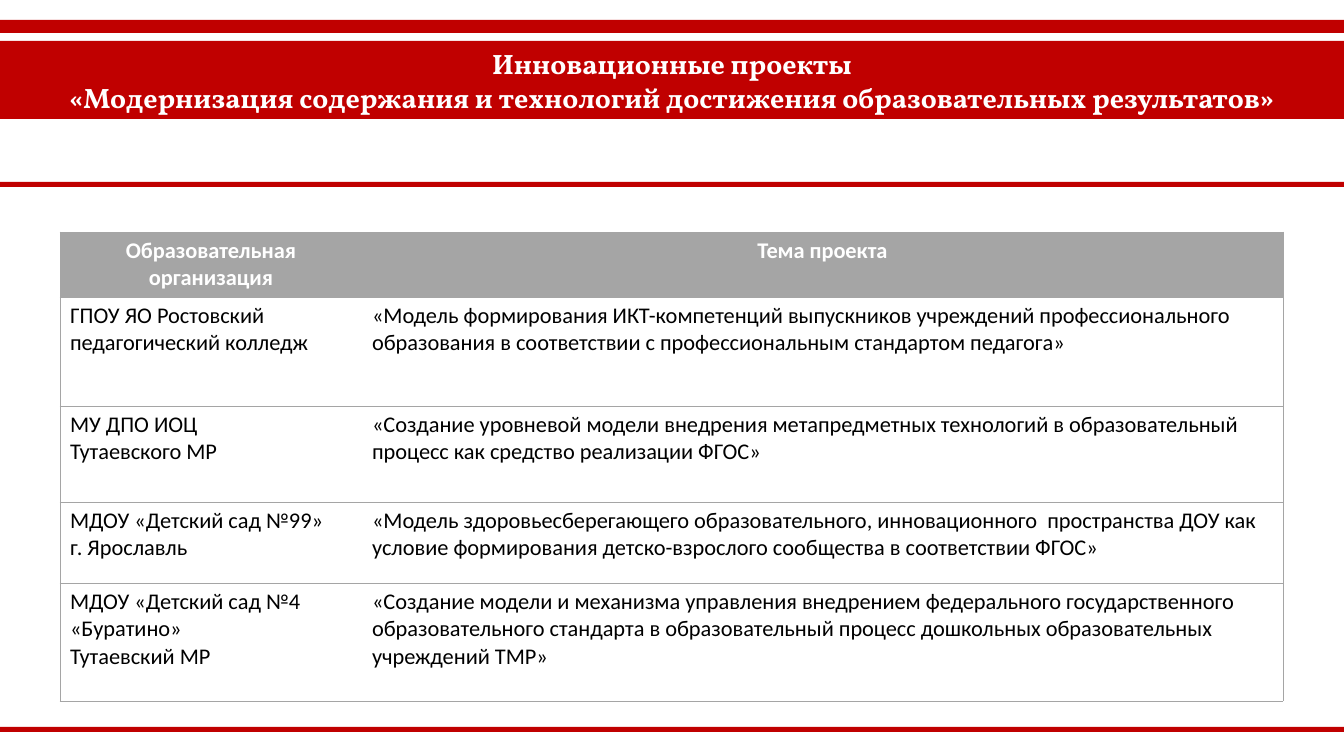
"""Builds a slide listing innovation projects of educational organisations."""
from lxml import etree
from pptx import Presentation
from pptx.dml.color import RGBColor
from pptx.enum.shapes import MSO_SHAPE
from pptx.enum.text import MSO_ANCHOR, PP_ALIGN
from pptx.oxml.ns import qn
from pptx.util import Emu, Pt

RECTANGLE = MSO_SHAPE.RECTANGLE
MIDDLE = MSO_ANCHOR.MIDDLE
CENTER, LEFT = PP_ALIGN.CENTER, PP_ALIGN.LEFT

RED = RGBColor(0xC0, 0x00, 0x00)
GRAY = RGBColor(0xA5, 0xA5, 0xA5)
WHITE = RGBColor(0xFF, 0xFF, 0xFF)
BLACK = RGBColor(0x00, 0x00, 0x00)

TITLE = [
    "Инновационные проекты",
    "«Модернизация содержания и технологий достижения образовательных результатов»",
]
PROJECTS = [
    ("Образовательная организация", "Тема проекта"),
    ("ГПОУ ЯО Ростовский педагогический колледж",
     "«Модель формирования ИКТ-компетенций выпускников учреждений профессионального "
     "образования в соответствии с профессиональным стандартом педагога»"),
    ("МУ ДПО ИОЦ \vТутаевcкого МР",
     "«Создание уровневой модели внедрения метапредметных технологий в образовательный "
     "процесс как средство реализации ФГОС»"),
    ("МДОУ «Детский сад №99»\nг. Ярославль",
     "«Модель здоровьесберегающего образовательного, инновационного  пространства ДОУ как "
     "условие формирования детско-взрослого сообщества в соответствии ФГОС»"),
    ("МДОУ «Детский сад №4 «Буратино»\nТутаевский МР",
     "«Создание модели и механизма управления внедрением федерального государственного "
     "образовательного стандарта в образовательный процесс дошкольных образовательных "
     "учреждений ТМР»"),
]

SLIDE_WIDTH, SLIDE_HEIGHT = 1344, 756
TITLE_BAND = (41, 78)
STRIPES = [(20, 13), (182, 5), (727, 5)]
TABLE_LEFT, TABLE_TOP = 60, 232
COLUMN_WIDTHS = [302, 921]
ROW_HEIGHTS = [63, 109, 96, 81, 118]

TITLE_FONT = {"name": "Vollkorn", "size": Pt(20), "bold": True}
HEADER_FONT = {"name": "Calibri", "size": Pt(16), "bold": True}
BODY_FONT = {"name": "Calibri", "size": Pt(16), "bold": False}


def px(length):
    return Emu(round(length * 914400 / 100.8))


def write(frame, text, font, color, alignment):
    frame.text = text
    for paragraph in frame.paragraphs:
        paragraph.alignment = alignment
        for run in paragraph.runs:
            for key, value in font.items():
                setattr(run.font, key, value)
            run.font.color.rgb = color


def add_band(slide, top, height):
    band = slide.shapes.add_shape(RECTANGLE, 0, px(top), px(SLIDE_WIDTH), px(height))
    band.shadow.inherit = False
    band.fill.solid()
    band.fill.fore_color.rgb = RED
    band.line.fill.background()
    return band


def set_borders(cell, visible):
    properties = cell._tc.get_or_add_tcPr()
    for side in "LRTB":
        border = etree.SubElement(properties, qn(f"a:ln{side}"), w=str(Pt(0.5)))
        if side in visible:
            fill = etree.SubElement(border, qn("a:solidFill"))
            etree.SubElement(fill, qn("a:srgbClr"), val=str(GRAY))
        else:
            etree.SubElement(border, qn("a:noFill"))


def add_projects(slide):
    table = slide.shapes.add_table(
        len(PROJECTS), len(COLUMN_WIDTHS), px(TABLE_LEFT), px(TABLE_TOP),
        px(sum(COLUMN_WIDTHS)), px(sum(ROW_HEIGHTS))).table
    table.horz_banding = False
    for column, width in zip(table.columns, COLUMN_WIDTHS):
        column.width = px(width)
    for row, height in zip(table.rows, ROW_HEIGHTS):
        row.height = px(height)
    for row_index, project in enumerate(PROJECTS):
        is_header = row_index == 0
        for column_index, text in enumerate(project):
            cell = table.cell(row_index, column_index)
            set_borders(cell, "TB" + "LR"[column_index])
            if is_header:
                cell.fill.solid()
                cell.fill.fore_color.rgb = GRAY
                write(cell.text_frame, text, HEADER_FONT, WHITE, CENTER)
            else:
                cell.fill.background()
                write(cell.text_frame, text, BODY_FONT, BLACK, LEFT)


def main():
    deck = Presentation()
    deck.slide_width, deck.slide_height = px(SLIDE_WIDTH), px(SLIDE_HEIGHT)
    slide = deck.slides.add_slide(deck.slide_layouts[6])
    title_frame = add_band(slide, *TITLE_BAND).text_frame
    title_frame.word_wrap = True
    title_frame.vertical_anchor = MIDDLE
    write(title_frame, "\n".join(TITLE), TITLE_FONT, WHITE, CENTER)
    for stripe in STRIPES:
        add_band(slide, *stripe)
    add_projects(slide)
    deck.save("out.pptx")


if __name__ == "__main__":
    main()
